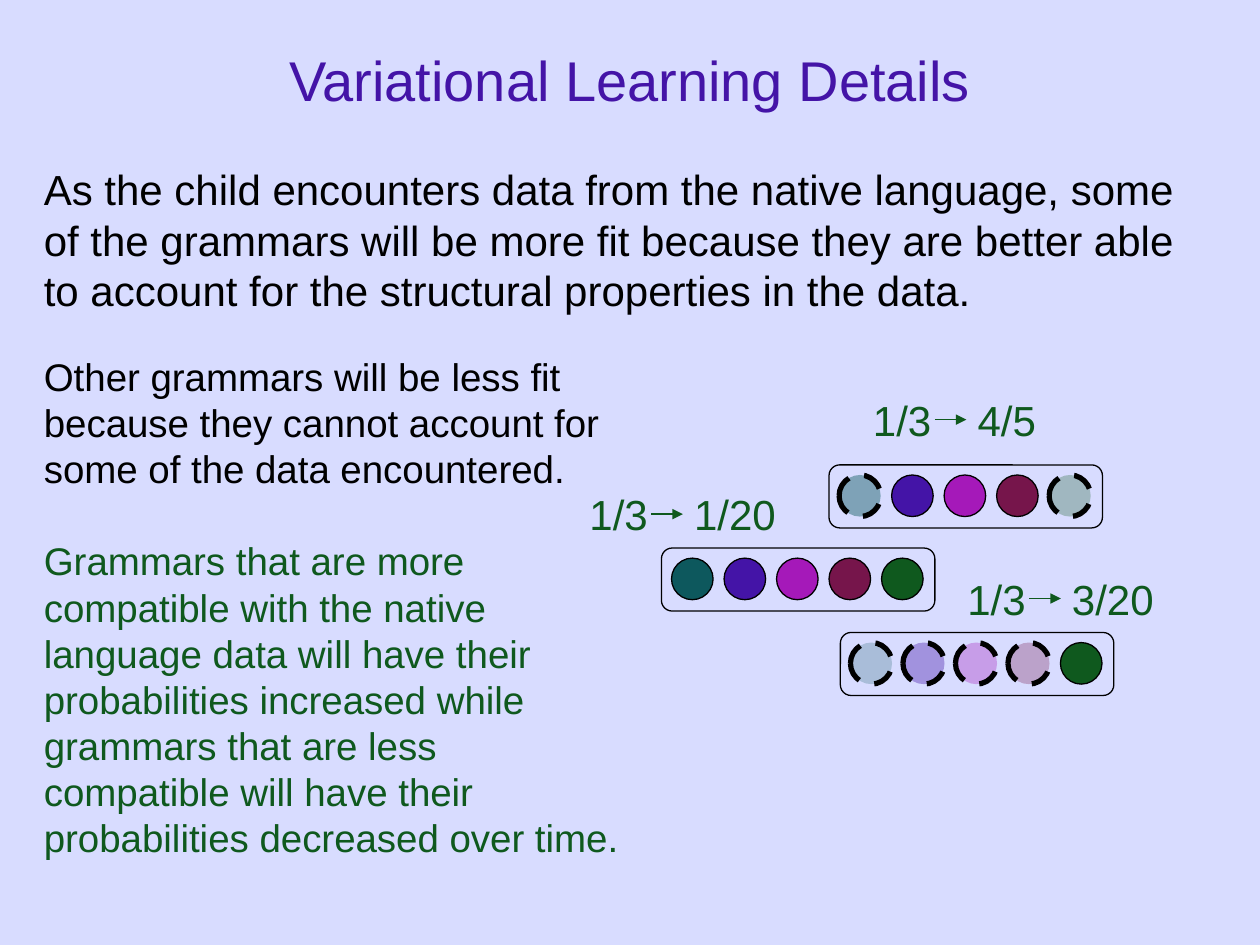
"""Build the Variational Learning Details slide with three grammars and their changing probabilities."""
from pptx import Presentation
from pptx.dml.color import RGBColor
from pptx.enum.dml import MSO_LINE
from pptx.enum.shapes import MSO_CONNECTOR, MSO_SHAPE
from pptx.enum.text import MSO_ANCHOR, PP_ALIGN
from pptx.oxml.ns import qn
from pptx.util import Inches, Pt
from lxml.etree import SubElement

BACKGROUND = RGBColor(0xD8, 0xDC, 0xFF)
BLACK = RGBColor(0x00, 0x00, 0x00)
TEAL = RGBColor(0x0D, 0x58, 0x5D)
INDIGO = RGBColor(0x44, 0x14, 0xA7)
MAGENTA = RGBColor(0xA5, 0x19, 0xB9)
MAROON = RGBColor(0x76, 0x15, 0x4B)
GREEN = RGBColor(0x0F, 0x59, 0x1E)
PARAMETER_COLORS = [TEAL, INDIGO, MAGENTA, MAROON, GREEN]
PARAMETER_PITCH = 5 / 12


def format_paragraph(paragraph, size, color):
    paragraph.font.name = "Arial"
    paragraph.font.size = Pt(size)
    paragraph.font.color.rgb = color
    paragraph.line_spacing = Pt(size * 1.2)


def add_text(left, top, width, height, texts, size, colors):
    frame = slide.shapes.add_textbox(Inches(left), Inches(top), Inches(width), Inches(height)).text_frame
    frame.word_wrap = True
    frame.text = "\n".join(texts)
    for paragraph, color in zip(frame.paragraphs, colors):
        format_paragraph(paragraph, size, color)
    return frame


presentation = Presentation()
presentation.slide_width = Inches(10)
presentation.slide_height = Inches(7.5)
slide = presentation.slides.add_slide(presentation.slide_layouts[5])
slide.background.fill.solid()
slide.background.fill.fore_color.rgb = BACKGROUND

title = slide.shapes.title
title.left, title.top, title.width, title.height = Inches(0), Inches(0), Inches(10), Inches(1.25)
title.text_frame.text = "Variational Learning Details"
title.text_frame.vertical_anchor = MSO_ANCHOR.MIDDLE
title.text_frame.paragraphs[0].alignment = PP_ALIGN.CENTER
format_paragraph(title.text_frame.paragraphs[0], 32, INDIGO)

add_text(0.25, 1.25, 9.5, 1.3, [
    "As the child encounters data from the native language, some of the grammars will be more fit "
    "because they are better able to account for the structural properties in the data.",
], 24, [BLACK])

explanation = add_text(0.25, 2.75, 4.83, 4.17, [
    "Other grammars will be less fit because they cannot account for some of the data encountered.",
    "Grammars that are more compatible with the native language data will have their probabilities "
    "increased while grammars that are less compatible will have their probabilities decreased over time.",
], 22, [BLACK, GREEN])
explanation.paragraphs[1].space_before = Pt(26.4)

grammars = [
    (5.25, 4.35, [None, None, None, None, None]),
    (6.67, 5.02, [23, 37, 32, 29, None]),
    (6.58, 3.69, [44, None, None, None, 28]),
]
for left, top, opacities in grammars:
    for index, (color, opacity) in enumerate(zip(PARAMETER_COLORS, opacities)):
        circle = slide.shapes.add_shape(
            MSO_SHAPE.OVAL, Inches(left + 0.08 + index * PARAMETER_PITCH), Inches(top + 0.08),
            Inches(0.33), Inches(0.33))
        circle.shadow.inherit = False
        circle.fill.solid()
        circle.fill.fore_color.rgb = color
        circle.line.color.rgb = BLACK
        circle.line.width = Pt(0.75)
        if opacity is not None:
            circle.line.width = Pt(3)
            circle.line.dash_style = MSO_LINE.DASH
            fill_color = circle.fill._xPr.find(qn("a:solidFill"))[0]
            SubElement(fill_color, qn("a:alpha"), val=str(opacity * 1000))
    frame = slide.shapes.add_shape(
        MSO_SHAPE.ROUNDED_RECTANGLE, Inches(left), Inches(top), Inches(2.17), Inches(0.5))
    frame.shadow.inherit = False
    frame.adjustments[0] = 0.17
    frame.fill.background()
    frame.line.color.rgb = BLACK
    frame.line.width = Pt(0.75)

probability_changes = [
    (6.83, 3.08, 1.55, "4/5", 7.42, 3.33),
    (4.58, 3.83, 1.78, "1/20", 5.17, 4.08),
    (7.58, 4.5, 1.7, "3/20", 8.17, 4.75),
]
for left, top, width, result, arrow_left, arrow_top in probability_changes:
    label = add_text(left, top, width, 0.5, [f"1/3\t{result}"], 24, [GREEN])
    tab_stops = SubElement(label.paragraphs[0]._p.get_or_add_pPr(), qn("a:tabLst"))
    SubElement(tab_stops, qn("a:tab"), pos=str(Inches(0.83)), algn="l")
    arrow = slide.shapes.add_connector(
        MSO_CONNECTOR.STRAIGHT, Inches(arrow_left), Inches(arrow_top),
        Inches(arrow_left + 0.25), Inches(arrow_top))
    arrow.line.color.rgb = GREEN
    arrow.line.width = Pt(0.75)
    SubElement(arrow.line._get_or_add_ln(), qn("a:tailEnd"), type="triangle")
    SubElement(arrow._element.spPr, qn("a:effectLst"))

presentation.save("out.pptx")
